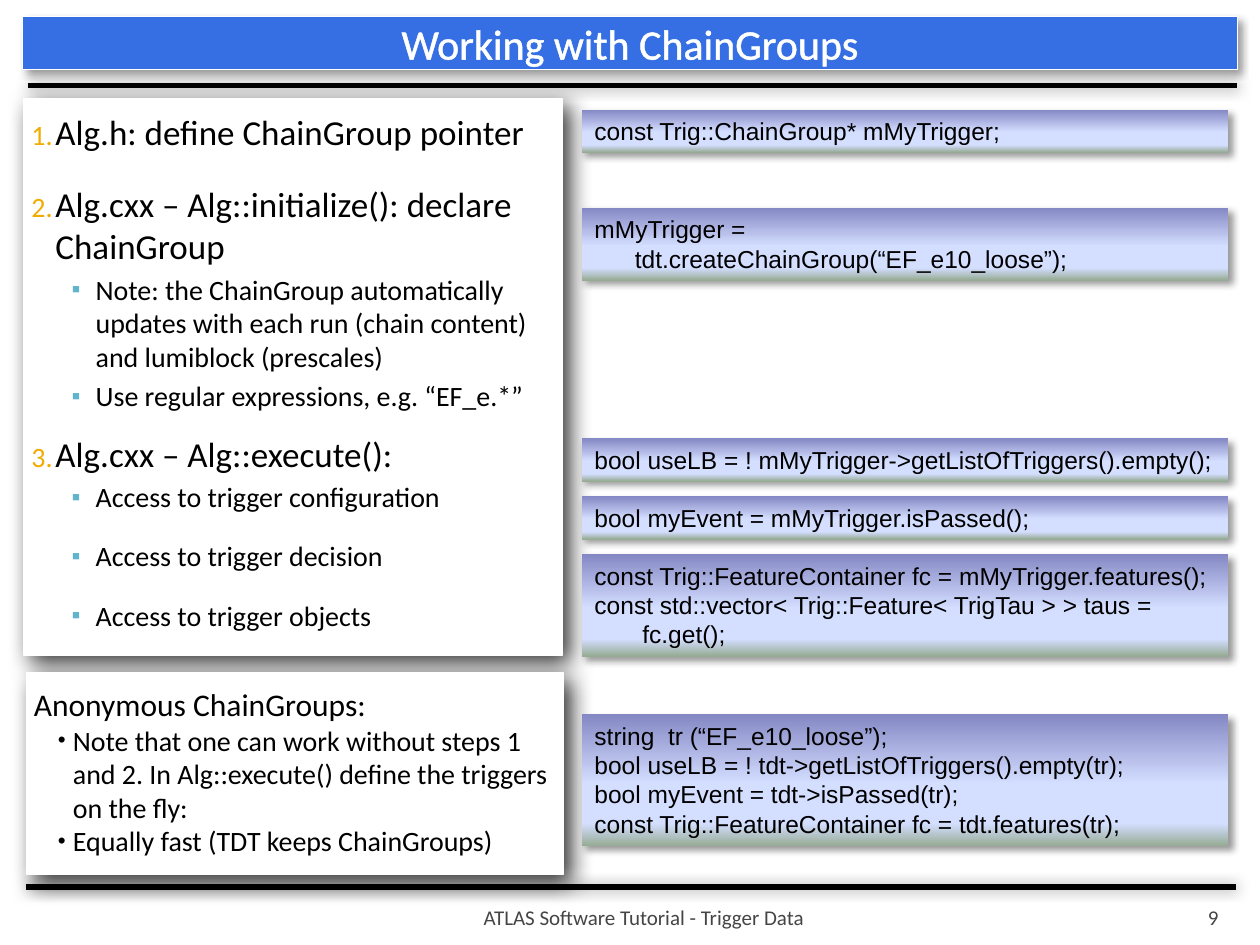
from dataclasses import dataclass

from lxml import etree
from pptx import Presentation
from pptx.dml.color import RGBColor
from pptx.enum.shapes import MSO_CONNECTOR, MSO_SHAPE
from pptx.enum.text import MSO_ANCHOR, MSO_AUTO_SIZE, PP_ALIGN
from pptx.oxml.ns import qn
from pptx.util import Inches, Pt

RECT, STRAIGHT = MSO_SHAPE.RECTANGLE, MSO_CONNECTOR.STRAIGHT
TOP, MIDDLE, BOTTOM = MSO_ANCHOR.TOP, MSO_ANCHOR.MIDDLE, MSO_ANCHOR.BOTTOM
LEFT, CENTER, RIGHT = PP_ALIGN.LEFT, PP_ALIGN.CENTER, PP_ALIGN.RIGHT
WIDTH, HEIGHT = Inches(10), Inches(7.5)
COLS, ROWS = 100, 75
TITLE_ONLY = 5


@dataclass(frozen=True)
class Theme:
    font: str = "Calibri"
    code_font: str = "Arial"
    title: int = 24
    item: int = 20
    heading: int = 18
    sub: int = 16
    code: int = 14
    footer: int = 12
    ink: str = "000000"
    paper: str = "FFFFFF"
    banner: str = "356FE3"
    grey: str = "454545"
    number: str = "F0AD00"
    square: str = "60B5CC"
    code_stops: tuple = ((0, "8488C4"), (53, "D4DEFF"), (83, "D4DEFF"), (100, "96AB94"))
    # Shadows: opacity %, blur pt, distance pt, angle in degrees
    rule_shadow: tuple = (50, 7.5, 0, 0)
    panel_shadow: tuple = (78, 13, 6, 45)
    soft_shadow: tuple = (40, 4, 3, 45)


def add(parent, tag, **attrs):
    return etree.SubElement(parent, qn(tag), {k: str(v) for k, v in attrs.items()})


class Deck:
    def __init__(self, theme):
        self.t = theme
        self.prs = Presentation()
        self.prs.slide_width, self.prs.slide_height = WIDTH, HEIGHT
        self.s = self.prs.slides.add_slide(self.prs.slide_layouts[TITLE_ONLY])

    def box(self, col, row, cols, rows):
        """Turn grid units into left, top, width and height."""
        x, y = WIDTH / COLS, HEIGHT / ROWS
        return int(col * x), int(row * y), int(cols * x), int(rows * y)

    def shadow(self, sp, look):
        alpha, blur, dist, angle = look
        spPr = sp._element.spPr
        for old in spPr.findall(qn("a:effectLst")):
            spPr.remove(old)
        outer = add(add(spPr, "a:effectLst"), "a:outerShdw", blurRad=Pt(blur), dist=Pt(dist),
                    dir=angle * 60000, algn="tl", rotWithShape=0)
        clr = add(outer, "a:srgbClr", val=self.t.ink)
        add(clr, "a:alpha", val=alpha * 1000)

    def paint(self, sp, fill, look):
        sp.fill.solid()
        sp.fill.fore_color.rgb = RGBColor.from_string(fill)
        sp.line.color.rgb = RGBColor.from_string(self.t.paper)
        sp.line.width = Pt(0.75)
        self.shadow(sp, look)

    def frame(self, sp, anchor=TOP, insets=(0.1, 0.05, 0.1, 0.05)):
        tf = sp.text_frame
        tf.word_wrap = True
        tf.auto_size = MSO_AUTO_SIZE.NONE
        tf.vertical_anchor = anchor
        tf.margin_left, tf.margin_top, tf.margin_right, tf.margin_bottom = map(Inches, insets)
        return tf

    def para(self, tf, text, size, color=None, font=None, align=LEFT, before=0,
             margin=0, hang=0, bullet=None, number=None, bullet_color=None, bullet_size=80):
        p = tf.paragraphs[0]
        if p.runs:
            p = tf.add_paragraph()
        p.alignment = align
        p.space_before = Pt(before)
        r = p.add_run()
        r.text = text
        r.font.size = Pt(size)
        r.font.name = font or self.t.font
        r.font.color.rgb = RGBColor.from_string(color or self.t.ink)
        pPr = p._p.get_or_add_pPr()
        pPr.set("marL", str(Inches(margin)))
        pPr.set("indent", str(-Inches(hang)))
        if bullet or number:
            add(add(pPr, "a:buClr"), "a:srgbClr", val=bullet_color or self.t.ink)
            add(pPr, "a:buSzPct", val=bullet_size * 1000)
        if number:
            add(pPr, "a:buAutoNum", type="arabicPeriod", startAt=number)
        elif bullet:
            add(pPr, "a:buFont", typeface=self.t.code_font)
            add(pPr, "a:buChar", char=bullet)
        else:
            add(pPr, "a:buNone")
        return r

    def title(self, text, *place):
        sp = self.s.shapes.title
        sp.left, sp.top, sp.width, sp.height = self.box(*place)
        self.paint(sp, self.t.banner, self.t.soft_shadow)
        r = self.para(self.frame(sp, MIDDLE), text, self.t.title, self.t.paper, align=CENTER)
        ln = etree.Element(qn("a:ln"), {"w": str(Pt(0.83))})
        add(add(ln, "a:solidFill"), "a:srgbClr", val=self.t.paper)
        r.font._element.insert(0, ln)

    def rule(self, col, row, cols):
        x, y, w, _ = self.box(col, row, cols, 0)
        line = self.s.shapes.add_connector(STRAIGHT, x, y, x + w, y)
        line.line.color.rgb = RGBColor.from_string(self.t.ink)
        line.line.width = Pt(3)
        self.shadow(line, self.t.rule_shadow)

    def panel(self, *place):
        sp = self.s.shapes.add_shape(RECT, *self.box(*place))
        self.paint(sp, self.t.paper, self.t.panel_shadow)
        return self.frame(sp, insets=(0.06, 0.1, 0.1, 0.05))

    def code(self, lines, *place):
        """Add a shaded code box; each line is (text, left indent)."""
        sp = self.s.shapes.add_shape(RECT, *self.box(*place))
        sp.line.fill.background()
        grad = etree.Element(qn("a:gradFill"), {"rotWithShape": "1"})
        stops = add(grad, "a:gsLst")
        for pos, color in self.t.code_stops:
            add(add(stops, "a:gs", pos=pos * 1000), "a:srgbClr", val=color)
        add(grad, "a:lin", ang=90 * 60000, scaled=0)
        sp._element.spPr.find(qn("a:prstGeom")).addnext(grad)
        self.shadow(sp, self.t.soft_shadow)
        tf = self.frame(sp)
        for text, margin in lines:
            self.para(tf, text, self.t.code, font=self.t.code_font, margin=margin)

    def footer(self, text, align, *place):
        sp = self.s.shapes.add_textbox(*self.box(*place))
        tf = self.frame(sp, BOTTOM, (0.05, 0.05, 0.1 if align == RIGHT else 0.05, 0))
        self.para(tf, text, self.t.footer, self.t.grey, align=align)


def main():
    t = Theme()
    d = Deck(t)

    # Title, rules and footer
    d.title("Working with ChainGroups", 1.8, 1.3, 96.4, 4.2)
    d.rule(2.2, 6.8, 96)
    d.rule(2.1, 70.4, 96)
    d.footer("ATLAS Software Tutorial - Trigger Data", CENTER, 21, 70.8, 60.2, 3)
    d.footer("9", RIGHT, 89.7, 70.8, 8, 3)

    # Numbered steps: heading, space before, then notes with theirs
    near, far = 3.2, 14.6
    steps = [
        ("Alg.h: define ChainGroup pointer", 0, []),
        ("Alg.cxx – Alg::initialize(): declare ChainGroup", 17, [
            ("Note: the ChainGroup automatically updates with each run "
             "(chain content) and lumiblock (prescales)", near),
            ("Use regular expressions, e.g. “EF_e.*”", near)]),
        ("Alg.cxx – Alg::execute():", 11.4, [
            ("Access to trigger configuration", near),
            ("Access to trigger decision", far),
            ("Access to trigger objects", far)]),
    ]
    tf = d.panel(1.9, 7.8, 42.7, 44.2)
    for n, (heading, before, notes) in enumerate(steps, 1):
        d.para(tf, heading, t.item, before=before, margin=0.19, hang=0.19,
               number=n, bullet_color=t.number)
        for note, gap in notes:
            d.para(tf, note, t.sub, before=gap, margin=0.51, hang=0.19,
                   bullet="▪", bullet_color=t.square, bullet_size=90)

    # Anonymous groups
    tf = d.panel(2.1, 53.4, 42.6, 16)
    d.para(tf, "Anonymous ChainGroups:", t.heading)
    for note in ("Note that one can work without steps 1 and 2. In Alg::execute() "
                 "define the triggers on the fly:",
                 "Equally fast (TDT keeps ChainGroups)"):
        d.para(tf, note, t.sub, margin=0.31, hang=0.12, bullet="•")

    # Code boxes: top row, lines; the height follows the number of lines
    snippets = [
        (8.7, [("const Trig::ChainGroup* mMyTrigger;", 0)]),
        (16.5, [("mMyTrigger =", 0), ("tdt.createChainGroup(“EF_e10_loose”);", 0.32)]),
        (34.8, [("bool useLB = ! mMyTrigger->getListOfTriggers().empty();", 0)]),
        (39.4, [("bool myEvent = mMyTrigger.isPassed();", 0)]),
        (44, [("const Trig::FeatureContainer fc = mMyTrigger.features();", 0),
              ("const std::vector< Trig::Feature< TrigTau > > taus =", 0),
              ("fc.get();", 0.38)]),
        (56.7, [("string  tr (“EF_e10_loose”);", 0),
                ("bool useLB = ! tdt->getListOfTriggers().empty(tr);", 0),
                ("bool myEvent = tdt->isPassed(tr);", 0),
                ("const Trig::FeatureContainer fc = tdt.features(tr);", 0)]),
    ]
    for row, lines in snippets:
        d.code(lines, 46.2, row, 51.3, 1.05 + 2.35 * len(lines))

    d.prs.save("out.pptx")


if __name__ == "__main__":
    main()
